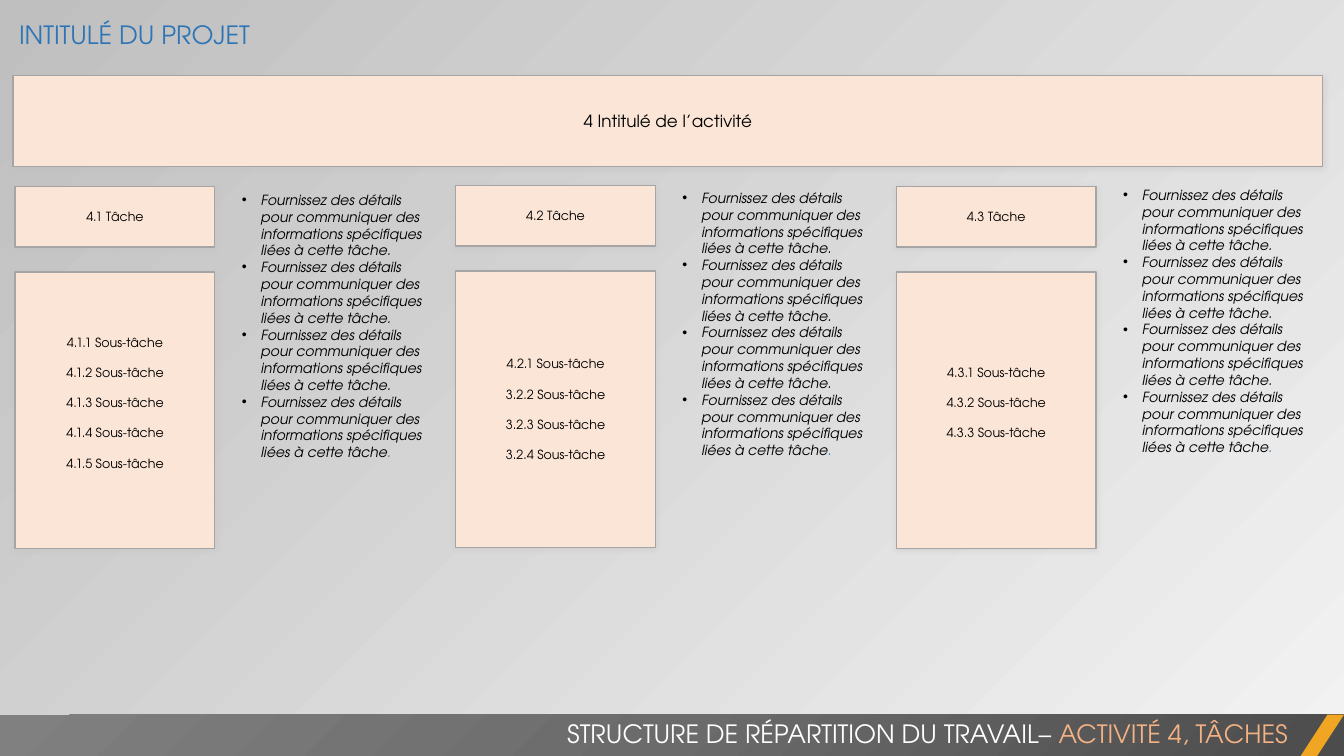
from dataclasses import dataclass

from lxml.etree import SubElement
from pptx import Presentation
from pptx.dml.color import RGBColor
from pptx.enum.shapes import MSO_SHAPE as Preset
from pptx.enum.text import MSO_ANCHOR as Anchor, MSO_AUTO_SIZE as AutoSize, PP_ALIGN as Align
from pptx.oxml import parse_xml
from pptx.oxml.ns import nsdecls, qn
from pptx.shapes.autoshape import Shape
from pptx.slide import Slide
from pptx.text.text import Font, TextFrame
from pptx.util import Inches, Pt

FONT_NAME = "TeX Gyre Adventor"
COLORS = {
    "box": "FBE5D6",
    "border": "A5A5A5",
    "shadow": "BFBFBF",
    "text": "000000",
    "title": "2E75B6",
    "footer": "FFFFFF",
    "footer_accent": "F4B183",
    "stripe": "F0A622",
    "background_light": "F2F2F2",
    "background_dark": "BFBFBF",
    "bar_dark": "4C4C4C",
    "bar_middle": "6B6B6B",
    "bar_light": "808080",
}
DETAIL = "Fournissez des détails pour communiquer des informations spécifiques liées à cette tâche"
DETAIL_COUNT = 4
COLUMN_LEFT = 0.15
COLUMN_PITCH = 4.37
DETAIL_OFFSET = 2.15
BOX_WIDTH = 1.98
SUBTASK_OFFSET = 0.85
SUBTASK_GAP = 10.8


@dataclass
class Area:
    left: float
    top: float
    width: float
    height: float

    def lengths(self) -> list[int]:
        return [Inches(value) for value in (self.left, self.top, self.width, self.height)]


@dataclass
class Task:
    title: str
    subtasks: list[str]
    top: float
    detail_top: float
    bottom_inset: float


TASKS = [
    Task("4.1 Tâche", ["4.1.1", "4.1.2", "4.1.3", "4.1.4", "4.1.5"], 1.85, 1.85, 0.2),
    Task("4.2 Tâche", ["4.2.1", "3.2.2", "3.2.3", "3.2.4"], 1.84, 1.83, 0.05),
    Task("4.3 Tâche", ["4.3.1", "4.3.2", "4.3.3"], 1.85, 1.8, 0.2),
]


def color(name: str) -> RGBColor:
    return RGBColor.from_string(COLORS[name])


def style_font(font: Font, size: float, color_name: str, italic: bool | None = None) -> None:
    font.name = FONT_NAME
    font.size = Pt(size)
    font.color.rgb = color(color_name)
    font.italic = italic


def add_plain_shape(slide: Slide, preset: Preset, area: Area, fill: str) -> Shape:
    shape = slide.shapes.add_shape(preset, *area.lengths())
    shape.shadow.inherit = False
    shape.fill.solid()
    shape.fill.fore_color.rgb = color(fill)
    shape.line.fill.background()
    return shape


def add_box(slide: Slide, area: Area, lines: list[str], size: float, bottom_inset: float = 0.05) -> None:
    shape = add_plain_shape(slide, Preset.RECTANGLE, area, "box")
    shape.line.color.rgb = color("border")
    shape.line.width = Pt(1)
    effects = shape._element.spPr.find(qn("a:effectLst"))
    shadow = SubElement(effects, qn("a:outerShdw"), blurRad=str(Pt(4)), dist=str(Pt(1)),
                        dir="5400000", algn="t", rotWithShape="0")
    shadow_color = SubElement(shadow, qn("a:srgbClr"), val=COLORS["shadow"])
    SubElement(shadow_color, qn("a:alpha"), val="40000")
    frame = shape.text_frame
    frame.word_wrap = True
    frame.vertical_anchor = Anchor.MIDDLE
    frame.margin_bottom = Inches(bottom_inset)
    for index, line in enumerate(lines):
        paragraph = frame.add_paragraph() if index else frame.paragraphs[0]
        paragraph.text = line
        paragraph.alignment = Align.CENTER
        paragraph.space_before = Pt(SUBTASK_GAP if index else 0)
        style_font(paragraph.font, size, "text")


def add_text_frame(slide: Slide, area: Area) -> TextFrame:
    frame = slide.shapes.add_textbox(*area.lengths()).text_frame
    frame.word_wrap = True
    frame.auto_size = AutoSize.SHAPE_TO_FIT_TEXT
    return frame


def add_heading(slide: Slide, area: Area, text: str, color_name: str, alignment: Align, accent: str = "") -> None:
    paragraph = add_text_frame(slide, area).paragraphs[0]
    paragraph.alignment = alignment
    style_font(paragraph.font, 18, color_name)
    paragraph.add_run().text = text
    if accent:
        run = paragraph.add_run()
        run.text = accent
        run.font.color.rgb = color("footer_accent")


def add_details(slide: Slide, area: Area) -> None:
    frame = add_text_frame(slide, area)
    for index in range(DETAIL_COUNT):
        paragraph = frame.add_paragraph() if index else frame.paragraphs[0]
        style_font(paragraph.font, 10, "text", italic=True)
        properties = paragraph._p.get_or_add_pPr()
        properties.set("marL", str(Inches(0.19)))
        properties.set("indent", str(-Inches(0.19)))
        bullet_font = parse_xml(f'<a:buFont {nsdecls("a")} typeface="Arial"/>')
        bullet = parse_xml(f'<a:buChar {nsdecls("a")} char="•"/>')
        properties.find(qn("a:defRPr")).addprevious(bullet_font)
        bullet_font.addnext(bullet)
        if index < DETAIL_COUNT - 1:
            paragraph.add_run().text = DETAIL + "."
        else:
            paragraph.add_run().text = DETAIL
            period = paragraph.add_run()
            period.text = "."
            period.font.color.rgb = color("title")


def paint_background(slide: Slide) -> None:
    fill = slide.background.fill
    fill.gradient()
    fill.gradient_angle = 135
    for stop, position, name in zip(fill.gradient_stops, (0, 1), ("background_light", "background_dark")):
        stop.position = position
        stop.color.rgb = color(name)


def add_footer_bar(slide: Slide) -> None:
    bar = add_plain_shape(slide, Preset.RECTANGLE, Area(0, 7.09, 13.33, 0.41), "bar_middle")
    stops = "".join(
        f'<a:gs pos="{position}"><a:srgbClr val="{COLORS[name]}"/></a:gs>'
        for position, name in ((0, "bar_dark"), (50000, "bar_middle"), (100000, "bar_light"))
    )
    gradient = parse_xml(
        f'<a:gradFill {nsdecls("a")} rotWithShape="1"><a:gsLst>{stops}</a:gsLst>'
        '<a:path path="circle"><a:fillToRect l="100000" t="100000"/></a:path></a:gradFill>'
    )
    properties = bar._element.spPr
    properties.replace(properties.find(qn("a:solidFill")), gradient)
    stripe = add_plain_shape(slide, Preset.PARALLELOGRAM, Area(12.9, 7.09, 0.43, 0.41), "stripe")
    stripe.adjustments[0] = 0.65


def main() -> None:
    presentation = Presentation()
    presentation.slide_width = Inches(13.33)
    presentation.slide_height = Inches(7.5)
    slide = presentation.slides.add_slide(presentation.slide_layouts[6])
    paint_background(slide)
    add_footer_bar(slide)
    add_heading(slide, Area(2.42, 7.08, 10.45, 0.4), "STRUCTURE DE RÉPARTITION DU TRAVAIL– ",
                "footer", Align.RIGHT, "ACTIVITÉ 4, TÂCHES")
    add_heading(slide, Area(0.09, 0.14, 10.11, 0.4), "INTITULÉ DU PROJET", "title", Align.LEFT)
    add_box(slide, Area(0.13, 0.75, 12.99, 0.9), ["4 Intitulé de l’activité"], 12)
    for index, task in enumerate(TASKS):
        left = COLUMN_LEFT + index * COLUMN_PITCH
        subtasks = [f"{number} Sous-tâche" for number in task.subtasks]
        add_box(slide, Area(left, task.top, BOX_WIDTH, 0.6), [task.title], 9)
        add_box(slide, Area(left, task.top + SUBTASK_OFFSET, BOX_WIDTH, 2.74), subtasks, 9, task.bottom_inset)
        add_details(slide, Area(left + DETAIL_OFFSET, task.detail_top, 2.06, 3))
    presentation.save("out.pptx")


if __name__ == "__main__":
    main()
